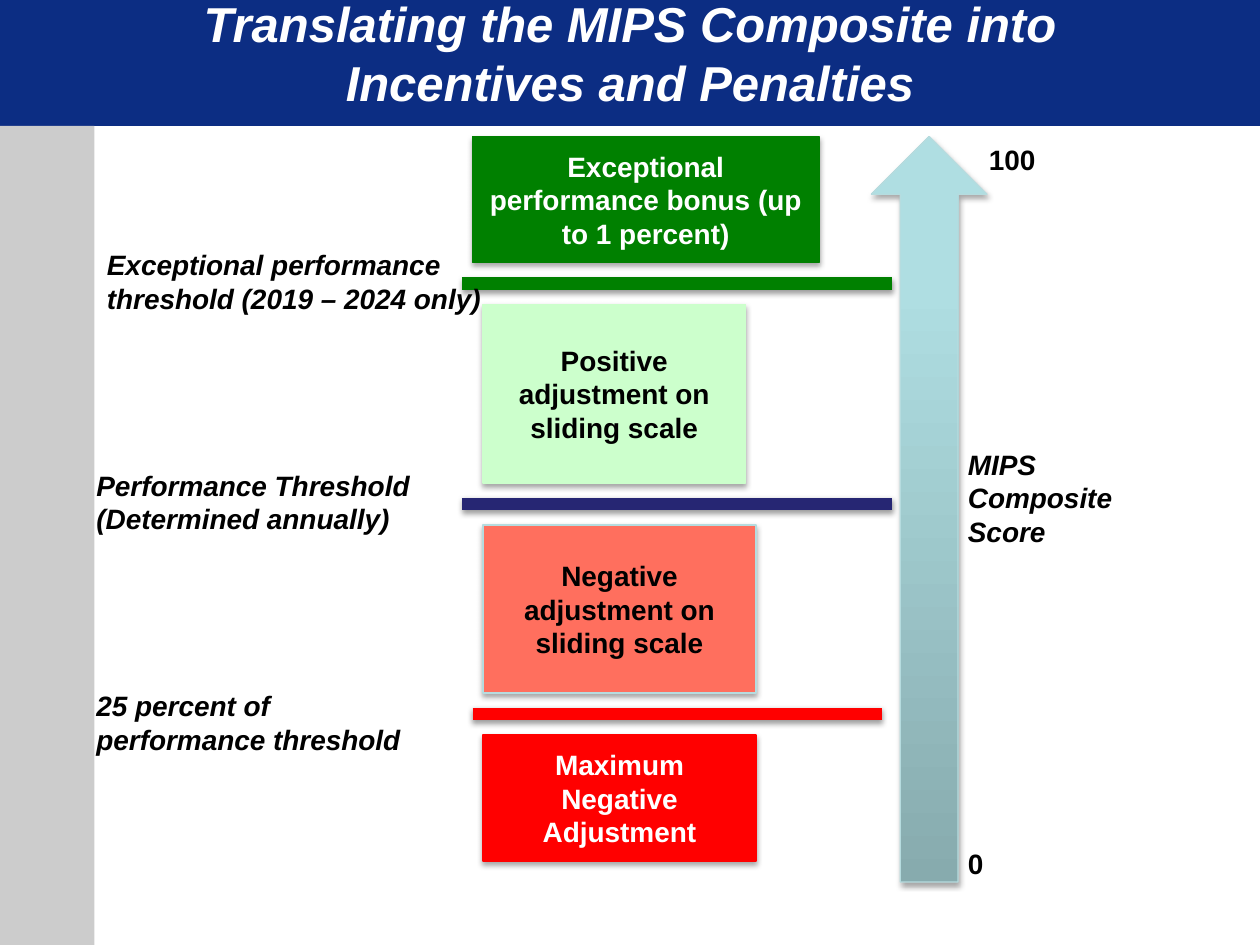
import pptx
import pptx.util
import pptx.dml.color
import pptx.enum.shapes
import pptx.enum.text
import pptx.oxml
import pptx.oxml.ns

THEME = {
    "font": "Arial", "title_size": 28, "text_size": 16,
    "edge": 0.75, "threshold_line": 7.25,
    "navy": "0C2D83", "gray": "CCCCCC", "white": "FFFFFF", "black": "000000",
    "indigo": "262673", "mint": "CCFFCC", "coral": "FF6F5E", "ice": "B6DCDF",
    "green": "008000", "red": "FF0000",
    "scale": [(0, "87ABAE"), (80, "AFDEE2"), (100, "AFE0E4")],
}
COLUMNS, ROWS = 120, 90
WIDTH, HEIGHT = pptx.util.Inches(10), pptx.util.Inches(7.5)

TITLE = ("Translating the MIPS Composite into Incentives and Penalties", (11, 1, 98, 8))
BANDS = [("navy", (0, 0, 120, 12)), ("gray", (0, 12, 9, 78))]
THRESHOLDS = [("indigo", 44, 85, 48), ("green", 44, 85, 27), ("red", 45, 84, 68)]
ADJUSTMENTS = [
    ("Positive adjustment on sliding scale", "mint", "mint", "black", (46, 29, 25, 17)),
    ("Negative adjustment on sliding scale", "coral", "ice", "black", (46, 50, 26, 16)),
    ("Maximum Negative Adjustment", "red", "red", "white", (46, 70, 26, 12)),
    ("Exceptional performance bonus (up to 1 percent)", "green", "green", "white", (45, 13, 33, 12)),
]
SCORE_ARROW = (83, 13, 11, 71)
LABELS = [
    (["Performance Threshold", "(Determined annually)"], True, (8, 44, 38, 8.5)),
    (["Exceptional performance threshold (2019 – 2024 only)"], True, (9, 23, 38, 12)),
    (["25 percent of performance threshold"], True, (8, 65, 34, 8)),
    (["MIPS Composite Score"], True, (91, 42, 20, 12)),
    (["0"], False, (91, 80, 6, 5)),
    (["100"], False, (93, 13, 8, 5)),
]


def color(name):
    return pptx.dml.color.RGBColor.from_string(THEME[name])


def place(cells):
    left, top, width, height = cells
    return [round(n) for n in (left * WIDTH / COLUMNS, top * HEIGHT / ROWS,
                               width * WIDTH / COLUMNS, height * HEIGHT / ROWS)]


def xml(body):
    return pptx.oxml.parse_xml(body.replace(">", " " + pptx.oxml.ns.nsdecls("a") + ">", 1))


def add_shadow(shape, distance, opacity):
    shape._element.spPr.append(xml(
        f'<a:effectLst><a:outerShdw blurRad="40000" dist="{distance}" dir="5400000" rotWithShape="0">'
        f'<a:srgbClr val="{THEME["black"]}"><a:alpha val="{opacity}000"/></a:srgbClr>'
        '</a:outerShdw></a:effectLst>'))


def write(frame, lines, ink, size="text_size", italic=False, align="LEFT", anchor="TOP"):
    frame.word_wrap = True
    frame.auto_size = pptx.enum.text.MSO_AUTO_SIZE.NONE
    frame.vertical_anchor = getattr(pptx.enum.text.MSO_ANCHOR, anchor)
    frame.text = "\n".join(lines)
    looks = {"name": THEME["font"], "size": pptx.util.Pt(THEME[size]), "bold": True, "italic": italic}
    for paragraph in frame.paragraphs:
        paragraph.alignment = getattr(pptx.enum.text.PP_ALIGN, align)
        for key, value in looks.items():
            setattr(paragraph.font, key, value)
        paragraph.font.color.rgb = color(ink)


def add_block(slide, kind, cells, fill, edge=None):
    block = slide.shapes.add_shape(getattr(pptx.enum.shapes.MSO_SHAPE, kind), *place(cells))
    block.fill.solid()
    block.fill.fore_color.rgb = color(fill)
    if edge:
        block.line.color.rgb = color(edge)
        block.line.width = pptx.util.Pt(THEME["edge"])
        add_shadow(block, 23000, 35)
    else:
        block.line.fill.background()
        block.shadow.inherit = False
    return block


def add_threshold(slide, ink, start, end, row):
    left, top, width, _ = place((start, row, end - start, 0))
    threshold = slide.shapes.add_connector(
        pptx.enum.shapes.MSO_CONNECTOR.STRAIGHT, left, top, left + width, top)
    threshold.line.color.rgb = color(ink)
    threshold.line.width = pptx.util.Pt(THEME["threshold_line"])
    add_shadow(threshold, 20000, 38)


def add_score_arrow(slide):
    arrow = add_block(slide, "UP_ARROW", SCORE_ARROW, "ice", "ice")
    stops = "".join(f'<a:gs pos="{position}000"><a:srgbClr val="{shade}"/></a:gs>'
                    for position, shade in THEME["scale"])
    properties = arrow._element.spPr
    solid = properties.find(pptx.oxml.ns.qn("a:solidFill"))
    properties.replace(solid, xml(
        f'<a:gradFill rotWithShape="1"><a:gsLst>{stops}</a:gsLst>'
        '<a:lin ang="16200000" scaled="0"/></a:gradFill>'))


def main():
    deck = pptx.Presentation()
    deck.slide_width, deck.slide_height = WIDTH, HEIGHT
    slide = deck.slides.add_slide(deck.slide_layouts[5])

    for fill, cells in BANDS:
        add_block(slide, "RECTANGLE", cells, fill)

    heading, cells = TITLE
    title = slide.shapes.title
    title.left, title.top, title.width, title.height = place(cells)
    write(title.text_frame, [heading], "white", "title_size", True, "CENTER", "MIDDLE")
    slide.shapes._spTree.append(title._element)

    for threshold in THRESHOLDS:
        add_threshold(slide, *threshold)
    for text, fill, edge, ink, cells in ADJUSTMENTS:
        block = add_block(slide, "RECTANGLE", cells, fill, edge)
        write(block.text_frame, [text], ink, align="CENTER", anchor="MIDDLE")
    add_score_arrow(slide)
    for lines, italic, cells in LABELS:
        label = slide.shapes.add_textbox(*place(cells))
        write(label.text_frame, lines, "black", italic=italic)

    deck.save("out.pptx")


if __name__ == "__main__":
    main()
